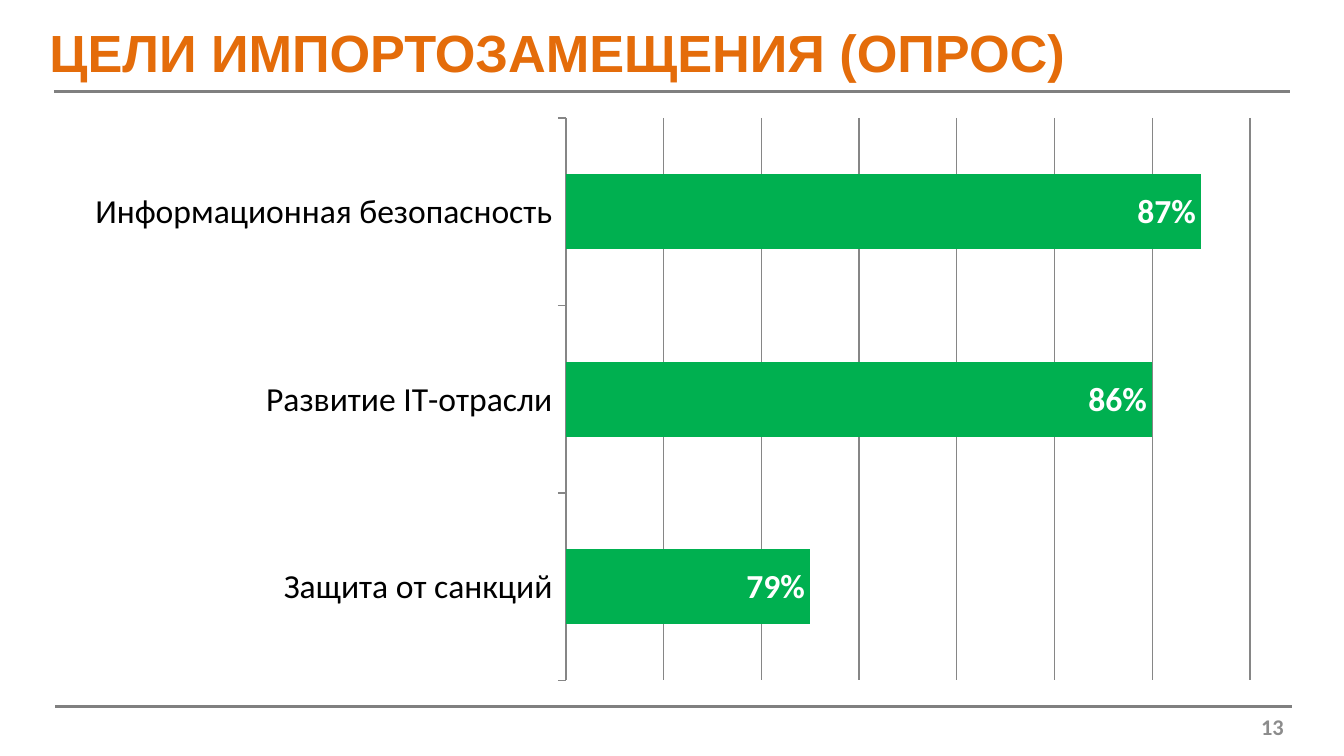
from lxml import etree
from pptx import Presentation
from pptx.chart.data import CategoryChartData
from pptx.dml.color import RGBColor
from pptx.enum import chart as kinds, shapes, text
from pptx.oxml.ns import qn
from pptx.util import Inches, Pt

WIDE = 10
HIGH = WIDE * 9 / 16
HUES = {"title": "E46C0A", "rule": "808080", "page": "8C8C8C", "bar": "00B050",
        "grid": "868686", "text": "000000", "label": "FFFFFF"}
GOALS = {"Защита от санкций": 0.79, "Развитие IT-отрасли": 0.86,
         "Информационная безопасность": 0.87}


def hue(name):
    return RGBColor.from_string(HUES[name])


def style(font, face, size, name, bold=False):
    font.name, font.size, font.bold = face, Pt(size), bold
    font.color.rgb = hue(name)


def add_rule(slide, left, top, width):
    rule = slide.shapes.add_connector(
        shapes.MSO_CONNECTOR.STRAIGHT, Inches(left), Inches(top),
        Inches(left + width), Inches(top))
    rule.line.color.rgb = hue("rule")
    rule.line.width = Pt(1.5)
    etree.SubElement(rule._element.spPr, qn("a:effectLst"))


def add_text(slide, box, words, align, wrap):
    frame = slide.shapes.add_textbox(*map(Inches, box)).text_frame
    frame.word_wrap = wrap
    frame.vertical_anchor = text.MSO_ANCHOR.MIDDLE
    line = frame.paragraphs[0]
    line.text, line.alignment = words, align
    return line.font


def add_head(slide, left, top, width, height):
    font = add_text(slide, (left, top, width * 0.84, height * 0.98),
                    "ЦЕЛИ ИМПОРТОЗАМЕЩЕНИЯ (ОПРОС)", text.PP_ALIGN.LEFT, False)
    style(font, "Arial", 28, "title", True)
    add_rule(slide, left + 0.13, top + height, WIDE * 0.92)


def add_foot(slide, left, top, width, height):
    add_rule(slide, left, top, WIDE * 0.92)
    font = add_text(slide, (left + width * 0.75, top, width * 0.25, height),
                    "13", text.PP_ALIGN.RIGHT, True)
    style(font, "Calibri", 12, "page", True)


def add_bars(slide, left, top, width, height):
    data = CategoryChartData(number_format="0%")
    data.categories = list(GOALS)
    data.add_series("Series 1", list(GOALS.values()))
    chart = slide.shapes.add_chart(
        kinds.XL_CHART_TYPE.BAR_CLUSTERED,
        *map(Inches, (left, top, width, height)), data).chart
    chart.has_legend = chart.has_title = False
    style(chart.font, "Calibri", 18, "text")

    # Axes and grid
    cats, vals = chart.category_axis, chart.value_axis
    cats.major_tick_mark = kinds.XL_TICK_MARK.OUTSIDE
    vals.visible = False
    vals.minimum_scale, vals.maximum_scale, vals.major_unit = 0.74, 0.88, 0.02
    vals.has_major_gridlines = True
    for part in (cats, vals.major_gridlines):
        part.format.line.color.rgb = hue("grid")
        part.format.line.width = Pt(0.75)

    # Bars and their labels
    plot = chart.plots[0]
    plot.gap_width, plot.vary_by_categories = 150, False
    fill = plot.series[0].format.fill
    fill.solid()
    fill.fore_color.rgb = hue("bar")
    plot.has_data_labels = True
    labels = plot.data_labels
    labels.show_value = True
    labels.number_format, labels.number_format_is_linked = "0%", False
    labels.position = kinds.XL_LABEL_POSITION.INSIDE_END
    style(labels.font, "Calibri", 18, "label", True)


def main():
    deck = Presentation()
    deck.slide_width, deck.slide_height = Inches(WIDE), Inches(HIGH)
    slide = deck.slides.add_slide(deck.slide_layouts[6])
    add_head(slide, 0.27, 0.1, 9.33, 0.58)
    add_bars(slide, 0.53, 0.79, 8.95, 4.36)
    add_foot(slide, 0.41, 5.26, 9.24, 0.3)
    deck.save("out.pptx")


if __name__ == "__main__":
    main()
